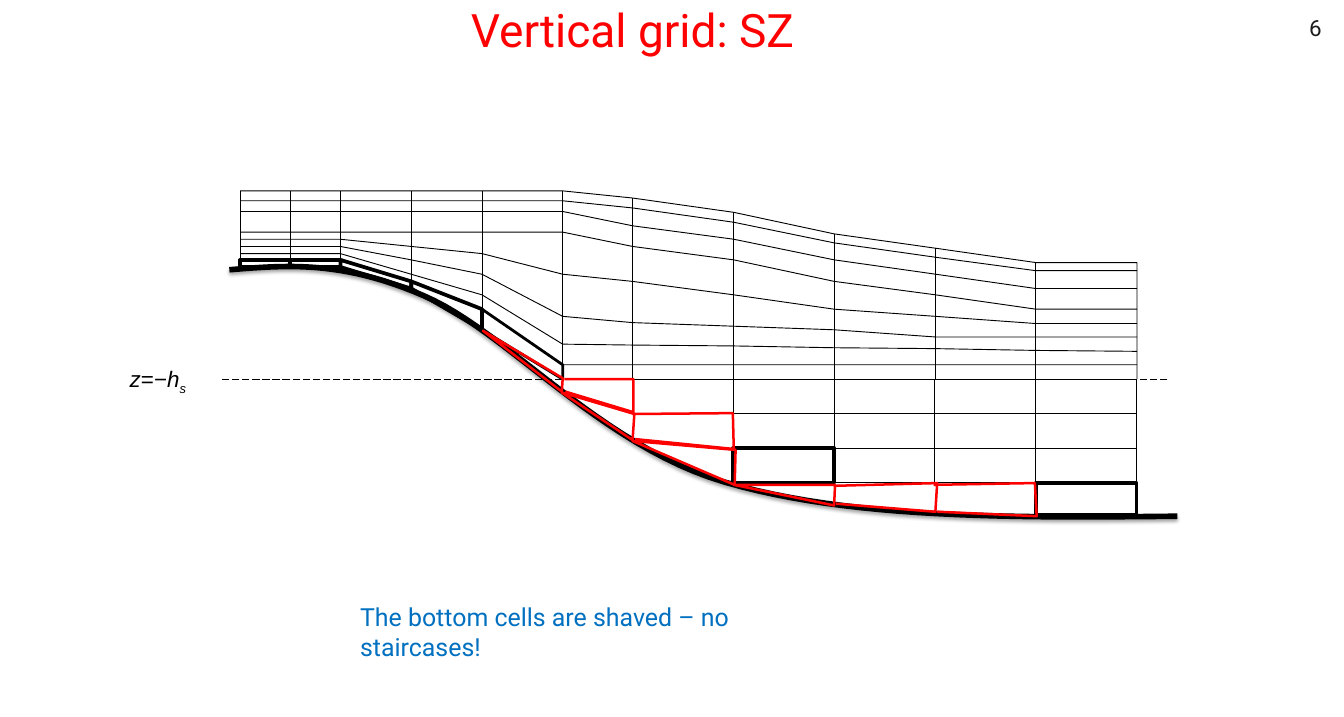
from lxml import etree
from pptx import Presentation
from pptx.dml.color import RGBColor
from pptx.enum.dml import MSO_LINE
from pptx.enum.shapes import MSO_CONNECTOR, MSO_SHAPE
from pptx.enum.text import MSO_ANCHOR, MSO_AUTO_SIZE, PP_ALIGN
from pptx.oxml.ns import qn
from pptx.util import Inches, Pt

RECTANGLE = MSO_SHAPE.RECTANGLE
STRAIGHT = MSO_CONNECTOR.STRAIGHT
LONG_DASH = MSO_LINE.LONG_DASH
NO_AUTOSIZE = MSO_AUTO_SIZE.NONE
TOP, BOTTOM = MSO_ANCHOR.TOP, MSO_ANCHOR.BOTTOM
LEFT, CENTER, RIGHT = PP_ALIGN.LEFT, PP_ALIGN.CENTER, PP_ALIGN.RIGHT

COLORS = {"black": "000000", "ink": "1C1C1C", "red": "FF0000", "blue": "0070C0"}
THIN, SHAVED, MEDIUM, THICK, SEABED = 0.75, 2, 2.25, 3, 4.5

NODES = [2.68, 3.24, 3.8, 4.59, 5.38, 6.28, 7.06, 8.19, 9.31, 10.44, 11.56, 12.69]
LAYERS = [
    [2.13] * 6 + [2.21, 2.37, 2.61, 2.77, 2.93, 2.93],
    [2.24] * 6 + [2.32, 2.48, 2.71, 2.87, 3.02, 3.02],
    [2.36] * 6 + [2.52, 2.67, 2.9, 3.06, 3.22, 3.22],
    [2.59] * 6 + [2.75, 2.9, 3.14, 3.29, 3.45, 3.45],
    [2.67] * 3 + [2.75, 2.83, 3.06, 3.14, 3.29, 3.45, 3.53, 3.61, 3.61],
    [2.75] * 3 + [2.9, 3.06, 3.53, 3.6, 3.64, 3.68, 3.76, 3.76, 3.76],
    [2.83] * 3 + [3.06, 3.29, 3.84, 3.85, 3.86, 3.88, 3.89, 3.91, 3.92],
    [2.9] * 3 + [3.14, 3.45] + [4.07] * 7,
]
FLOOR = [2.98] * 3 + [3.22, 3.68] + [4.23] * 7
Z_LEVEL, Z_STEP, CELL_WIDTH = 4.23, 0.385, 1.125
Z_FIRST_COLUMNS = [0, 1, 1]

SEABED_START = (2.56, 3.01)
SEABED_CURVES = [
    [(3.19, 2.96), (3.81, 2.9), (4.73, 3.3)],
    [(5.65, 3.69), (6.69, 4.97), (8.09, 5.38)],
    [(9.49, 5.79), (11.32, 5.78), (13.14, 5.76)],
]
SHAVED_CELLS = [
    ([(5.39, 3.69), (6.28, 4.22), (6.27, 4.37)], True),
    ([(6.3, 4.23), (7.07, 4.23), (7.07, 4.6), (6.31, 4.37)], False),
    ([(6.27, 4.38), (7.08, 4.62), (7.06, 4.91)], True),
    ([(7.06, 4.62), (8.18, 4.61), (8.19, 5.01), (7.09, 4.9)], False),
    ([(7.06, 4.92), (8.21, 5.02), (8.2, 5.41)], True),
    ([(8.19, 5.41), (9.32, 5.41), (9.31, 5.64)], True),
    ([(9.33, 5.42), (10.46, 5.39), (10.44, 5.71), (9.33, 5.62)], False),
    ([(10.42, 5.41), (11.55, 5.39), (11.57, 5.76), (10.46, 5.71)], False),
]


def write_text(shape, spans, size, color, font="Roboto", align=LEFT, anchor=TOP,
               wrap=True, margins=(0.1, 0.05)):
    frame = shape.text_frame
    frame.auto_size = NO_AUTOSIZE
    frame.word_wrap = wrap
    frame.vertical_anchor = anchor
    frame.margin_left = frame.margin_right = Inches(margins[0])
    frame.margin_top = frame.margin_bottom = Inches(margins[1])
    para = frame.paragraphs[0]
    para.alignment = align
    for text, italic, baseline in spans:
        span = para.add_run()
        span.text = text
        span.font.name = font
        span.font.size = Pt(size)
        span.font.bold = False
        span.font.italic = italic
        span.font.color.rgb = RGBColor.from_string(COLORS[color])
        if baseline:
            span.font._element.set("baseline", str(baseline * 1000))


def curve_points(start, curves, steps=24):
    points = [start]
    for first, second, end in curves:
        corners = [points[-1], first, second, end]
        for step in range(1, steps + 1):
            t = step / steps
            weights = [(1 - t) ** 3, 3 * t * (1 - t) ** 2, 3 * t ** 2 * (1 - t), t ** 3]
            points.append(tuple(
                sum(weight * corner[axis] for weight, corner in zip(weights, corners))
                for axis in (0, 1)))
    return points


class GridSlide:
    def __init__(self, deck):
        self.slide = deck.slides.add_slide(deck.slide_layouts[5])
        self.shapes = self.slide.shapes

    def place(self, shape, left, top, width, height):
        shape.left, shape.top = Inches(left), Inches(top)
        shape.width, shape.height = Inches(width), Inches(height)

    def title(self, text, bounds, **style):
        self.place(self.shapes.title, *bounds)
        write_text(self.shapes.title, [(text, False, 0)], **style)

    def label(self, spans, bounds, **style):
        box = self.shapes.add_textbox(*[Inches(value) for value in bounds])
        write_text(box, spans, **style)

    def stroke(self, shape, width, color):
        shape.line.color.rgb = RGBColor.from_string(COLORS[color])
        shape.line.width = Pt(width)

    def cell(self, bounds, width=THIN):
        box = self.shapes.add_shape(RECTANGLE, *[Inches(value) for value in bounds])
        box.fill.background()
        box.shadow.inherit = False
        self.stroke(box, width, "black")

    def line(self, start, end, dash=None):
        rule = self.shapes.add_connector(
            STRAIGHT, *[Inches(value) for value in (*start, *end)])
        etree.SubElement(rule._element.spPr, qn("a:effectLst"))
        self.stroke(rule, THIN, "black")
        if dash:
            rule.line.dash_style = dash

    def outline(self, points, width=THIN, color="black", close=False):
        corners = [(Inches(x), Inches(y)) for x, y in points]
        builder = self.shapes.build_freeform(*corners[0])
        builder.add_line_segments(corners[1:], close=close)
        shape = builder.convert_to_shape()
        shape.fill.background()
        shape.shadow.inherit = False
        self.stroke(shape, width, color)
        return shape

    def drop_shadow(self, shape):
        effects = shape._element.spPr.find(qn("a:effectLst"))
        shadow = etree.SubElement(
            effects, qn("a:outerShdw"), blurRad=str(Pt(3.1)), dist=str(Pt(1.8)),
            dir="5400000", rotWithShape="0")
        tint = etree.SubElement(shadow, qn("a:srgbClr"), val=COLORS["black"])
        etree.SubElement(tint, qn("a:alpha"), val="35000")


def draw_z_cells(page):
    for row, first_column in enumerate(Z_FIRST_COLUMNS):
        for column in range(first_column, 5):
            width = THICK if (row, column) == (2, 1) else THIN
            page.cell((NODES[6] + column * CELL_WIDTH, Z_LEVEL + row * Z_STEP,
                       CELL_WIDTH, Z_STEP), width)
    page.cell((11.56, 5.39, CELL_WIDTH, 0.36), THICK)


def draw_s_layers(page):
    surface, bottom = LAYERS[0], LAYERS[-1]
    for x, top, floor in list(zip(NODES, surface, FLOOR))[:-1]:
        page.line((x, floor), (x, top))
    page.outline([*zip(NODES, surface), (NODES[-1], Z_LEVEL)])
    for depths in LAYERS[1:]:
        page.outline(list(zip(NODES, depths)))
    for west in range(5):
        east = west + 1
        page.outline([(NODES[east], FLOOR[east]), (NODES[east], bottom[east]),
                      (NODES[west], bottom[west]), (NODES[west], FLOOR[west])],
                     MEDIUM if west == 4 else THICK, close=True)


def main():
    deck = Presentation()
    deck.slide_width, deck.slide_height = Inches(15), Inches(8)
    page = GridSlide(deck)
    page.title("Vertical grid: SZ", (1.5, 0.09, 11.12, 0.61), size=37, color="red",
               align=CENTER, anchor=BOTTOM, margins=(0.13, 0.07))
    page.label([("6", False, 0)], (14, 0, 0.88, 0.53), size=18, color="ink",
               align=RIGHT, anchor=BOTTOM, margins=(0.13, 0.07))
    seabed = page.outline(curve_points(SEABED_START, SEABED_CURVES), SEABED)
    page.drop_shadow(seabed)
    page.line((13.03, Z_LEVEL), (2.45, Z_LEVEL), LONG_DASH)
    draw_z_cells(page)
    draw_s_layers(page)
    page.label([("z", True, 0), ("=−", False, 0), ("h", True, 0), ("s", True, -25)],
               (1.35, 4.03, 0.84, 0.4), size=18, color="black", font="Arial", wrap=False)
    for points, close in SHAVED_CELLS:
        page.outline(points, SHAVED, "red", close)
    page.label([("The bottom cells are shaved – no staircases!", False, 0)],
               (3.92, 6.66, 5.71, 0.44), size=20, color="blue")
    deck.save("out.pptx")


if __name__ == "__main__":
    main()
